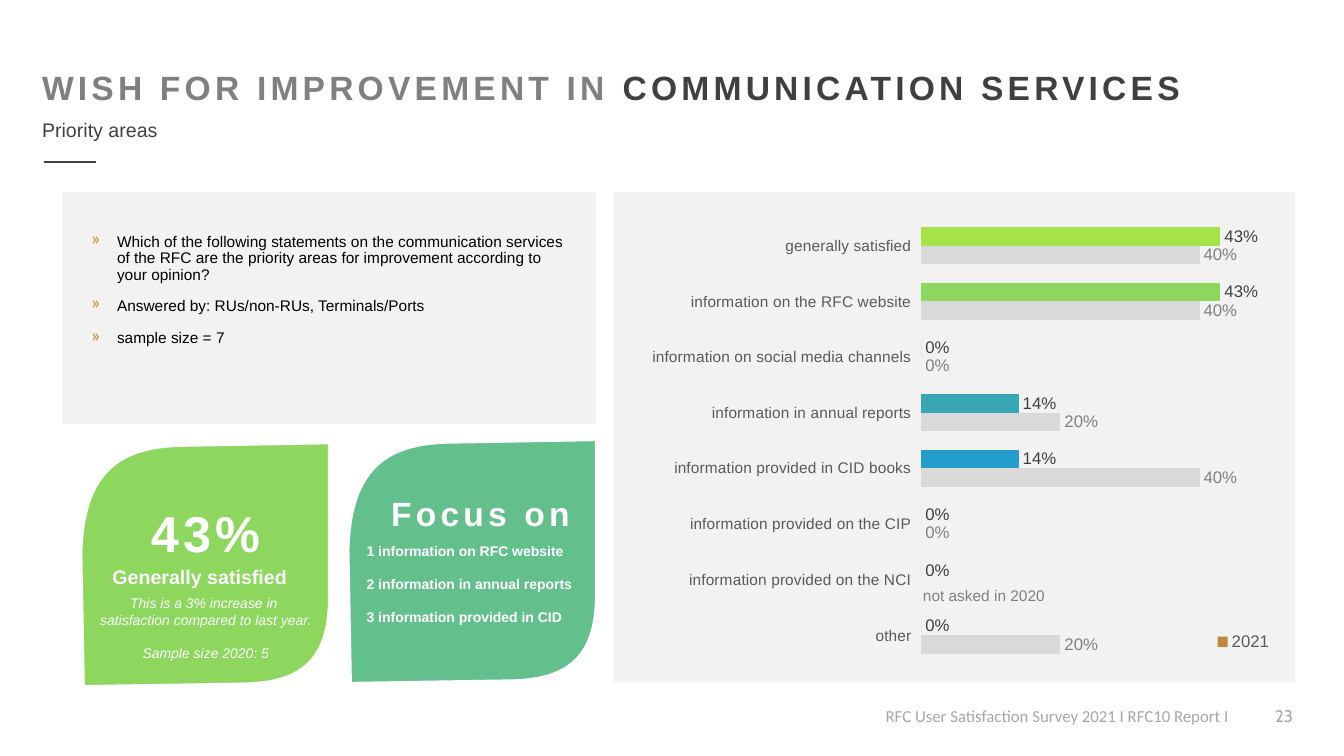
from lxml.etree import SubElement, fromstring
from pptx import Presentation
from pptx.chart.data import CategoryChartData
from pptx.dml.color import RGBColor
from pptx.enum.chart import XL_CHART_TYPE, XL_LABEL_POSITION, XL_LEGEND_POSITION, XL_TICK_MARK
from pptx.enum.shapes import MSO_CONNECTOR, MSO_SHAPE
from pptx.enum.text import MSO_ANCHOR, PP_ALIGN
from pptx.oxml.ns import qn
from pptx.util import Cm, Pt

HUES = {
    "white": "FFFFFF", "black": "000000", "panel": "F2F2F2", "dark": "404040",
    "mid": "595959", "grey": "808080", "pale": "A6A6A6", "last": "D9D9D9",
    "gold": "BF873D", "lime": "8DD75F", "green": "63C08C",
}
BARS = ["A5E348", "8DD75F", "63C08C", "37A7B5", "239DCC", "74C7E9", "9999FF", "CBCACF"]
AREAS = [
    ("generally satisfied", 0.43, 0.4),
    ("information on the RFC website", 0.43, 0.4),
    ("information on social media channels", 0, 0),
    ("information in annual reports", 0.14, 0.2),
    ("information provided in CID books", 0.14, 0.4),
    ("information provided on the CIP", 0, 0),
    ("information provided on the NCI", 0, 0),
    ("other", 0, 0.2),
]
MID, RIGHT = PP_ALIGN.CENTER, PP_ALIGN.RIGHT


def tint(name):
    return RGBColor.from_string(HUES[name])


def style(font, size, hue, face="Arial", bold=False, slant=False):
    font.size, font.name, font.bold, font.italic = Pt(size), face, bold, slant
    font.color.rgb = tint(hue)


def track(par):
    for run in par.runs:
        run._r.get_or_add_rPr().set("spc", "300")


def text(slide, box, lines, size, hue, align=None, wrap=True, gaps=(), **look):
    frame = slide.shapes.add_textbox(*map(Cm, box)).text_frame
    frame.word_wrap = wrap
    for i, line in enumerate(lines):
        par = frame.paragraphs[0] if i == 0 else frame.add_paragraph()
        par.text = line
        par.alignment = align
        style(par.font, size, hue, **look)
        if i in gaps:
            par.space_before = Pt(11.5)
    return frame


def panel(slide, box):
    rect = slide.shapes.add_shape(MSO_SHAPE.RECTANGLE, *map(Cm, box))
    rect.shadow.inherit = False
    rect.fill.solid()
    rect.fill.fore_color.rgb = tint("panel")
    rect.line.fill.background()
    return rect


def head(slide, x, y):
    frame = text(slide, (x, y, 31.45, 1.27), ["WISH FOR IMPROVEMENT IN "], 24, "grey", bold=True)
    par = frame.paragraphs[0]
    run = par.add_run()
    run.text = "COMMUNICATION SERVICES"
    run.font.color.rgb = tint("dark")
    track(par)
    text(slide, (x, y + 1.29, 3.45, 0.86), ["Priority areas"], 14, "dark", wrap=False)
    rule = slide.shapes.add_connector(
        MSO_CONNECTOR.STRAIGHT, Cm(x + 0.31), Cm(y + 2.54), Cm(x + 1.6), Cm(y + 2.54))
    rule.line.color.rgb = tint("dark")
    rule.line.width = Pt(1.5)
    SubElement(rule._element.spPr, qn("a:effectLst"))


def bullet(par):
    par.line_spacing, par.space_before = 0.9, Pt(10)
    props = par._p.get_or_add_pPr()
    props.set("marL", str(Cm(0.64)))
    props.set("indent", str(-Cm(0.64)))
    shade = SubElement(props, qn("a:buClr"))
    SubElement(shade, qn("a:srgbClr")).set("val", HUES["gold"])
    SubElement(props, qn("a:buChar")).set("char", "»")


def notes(slide, x, y):
    panel(slide, (x, y, 13.46, 5.84))
    parts = [
        (0.92, 12.57, 2.08, [
            "Which of the following statements on the communication services of the RFC "
            "are the priority areas for improvement according to your opinion?",
            "Answered by: RUs/non-RUs, Terminals/Ports"]),
        (3.35, 5.77, 0.84, ["sample size = 7"]),
    ]
    for top, wide, high, lines in parts:
        frame = text(slide, (x + 0.49, y + top, wide, high), lines, 11, "black")
        for par in frame.paragraphs:
            bullet(par)


def curve(a, b, c, d, steps=24):
    for i in range(1, steps + 1):
        t = i / steps
        s = 1 - t
        yield tuple(s**3 * p + 3 * s * s * t * q + 3 * s * t * t * r + t**3 * u
                    for p, q, r, u in zip(a, b, c, d))


def leaf(slide, x, y, hue, wide=6.22, high=6.1):
    spots = [(0.01, 1), (0, 0.45)]
    spots += curve((0, 0.45), (0.01, 0.1), (0.17, 0.01), (0.43, 0.01))
    spots += [(1, 0), (1, 0.67)]
    spots += curve((1, 0.67), (0.99, 0.9), (0.88, 0.99), (0.64, 0.99))
    pts = [(Cm(x + u * wide), Cm(y + v * high)) for u, v in spots]
    form = slide.shapes.build_freeform(*pts[0])
    form.add_line_segments(pts[1:], close=True)
    shape = form.convert_to_shape()
    shape.shadow.inherit = False
    shape.fill.solid()
    shape.fill.fore_color.rgb = tint(hue)
    shape.line.color.rgb = tint("white")
    shape.line.width = Pt(1)


def score(slide, x, y):
    leaf(slide, x, y, "lime")
    big = text(slide, (x + 1.42, y + 1.34, 3.4, 1.8), ["43%"], 36, "white", MID, False, bold=True)
    track(big.paragraphs[0])
    text(slide, (x + 0.51, y + 2.94, 4.93, 0.86), ["Generally satisfied"],
         14, "white", MID, False, bold=True)
    text(slide, (x, y + 3.68, 6.25, 1.96),
         ["This is a 3% increase in ", "satisfaction compared to last year.", "Sample size 2020: 5"],
         10, "white", MID, gaps=(2,), slant=True)


def focus(slide, x, y):
    leaf(slide, x, y, "green")
    big = text(slide, (x + 0.74, y + 1.19, 5.16, 1.27), ["Focus on"],
               24, "white", MID, False, bold=True)
    track(big.paragraphs[0])
    text(slide, (x + 0.2, y + 2.44, 5.74, 2.82),
         ["1 information on RFC website", "2 information in annual reports",
          "3 information provided in CID"],
         10, "white", wrap=False, gaps=(1, 2), bold=True)


def layout(x, y, w, h, inner=False):
    space = "http://schemas.openxmlformats.org/drawingml/2006/chart"
    aim = '<c:layoutTarget val="inner"/>' if inner else ""
    sides = "".join(f'<c:{k}Mode val="edge"/>' for k in "xy")
    sizes = "".join(f'<c:{k} val="{v}"/>' for k, v in zip("xywh", (x, y, w, h)))
    return fromstring(f'<c:layout xmlns:c="{space}"><c:manualLayout>{aim}{sides}{sizes}'
                      "</c:manualLayout></c:layout>")


def graph(slide, x, y):
    panel(slide, (x, y, 17.17, 12.34))
    names, now, past = zip(*AREAS)
    data = CategoryChartData(number_format="0%")
    data.categories = names
    data.add_series("2021", now)
    data.add_series("2020", past)
    box = map(Cm, (x + 0.61, y + 0.28, 16.23, 11.94))
    chart = slide.shapes.add_chart(XL_CHART_TYPE.BAR_CLUSTERED, *box, data).chart
    style(chart.font, 10, "black")
    chart.has_title = False

    plot = chart.plots[0]
    plot.gap_width, plot.overlap, plot.vary_by_categories = 100, 0, False
    for row, fill, ink in zip(plot.series, ("gold", "last"), ("dark", "grey")):
        row.invert_if_negative = False
        row.format.fill.solid()
        row.format.fill.fore_color.rgb = tint(fill)
        tags = row.data_labels
        tags.show_value, tags.position = True, XL_LABEL_POSITION.OUTSIDE_END
        tags.number_format, tags.number_format_is_linked = "0%", False
        style(tags.font, 12, ink)
    for i, hue in enumerate(BARS):
        fill = plot.series[0].points[i].format.fill
        fill.solid()
        fill.fore_color.rgb = RGBColor.from_string(hue)

    cats, vals = chart.category_axis, chart.value_axis
    cats.reverse_order = True
    cats.major_tick_mark = XL_TICK_MARK.OUTSIDE
    cats.format.line.fill.background()
    style(cats.tick_labels.font, 11, "mid")
    vals.minimum_scale, vals.maximum_scale = 0, 0.5
    vals.has_major_gridlines = vals.visible = False

    area = chart._chartSpace.chart.plotArea
    for old in area.findall(qn("c:layout")):
        area.remove(old)
    area.insert(0, layout(0.44, 0.03, 0.54, 0.94, True))

    chart.has_legend = True
    key = chart.legend
    key.position, key.include_in_layout = XL_LEGEND_POSITION.RIGHT, False
    style(key.font, 12, "mid")
    node = key._element
    for old in node.findall(qn("c:layout")):
        node.remove(old)
    entry = node.makeelement(qn("c:legendEntry"))
    SubElement(entry, qn("c:idx")).set("val", "0")
    SubElement(entry, qn("c:delete")).set("val", "1")
    node.insert(1, entry)
    node.insert(2, layout(0.88, 0.89, 0.12, 0.07))

    note = panel(slide, (x + 7.54, y + 9.78, 5.66, 0.74)).text_frame
    note.word_wrap, note.vertical_anchor = True, MSO_ANCHOR.MIDDLE
    par = note.paragraphs[0]
    par.text, par.alignment = "not asked in 2020", PP_ALIGN.LEFT
    style(par.font, 11, "grey")


def foot(slide, x, y):
    text(slide, (x, y, 9.65, 0.76), ["RFC User Satisfaction Survey 2021 I RFC10 Report I"],
         12, "pale", wrap=False, face="Calibri")
    text(slide, (x + 9.2, y, 1.57, 1.02), ["23"], 12, "pale", RIGHT, face="Cabin")


def main():
    deck = Presentation()
    deck.slide_width, deck.slide_height = Cm(33.87), Cm(19.05)
    slide = deck.slides.add_slide(deck.slide_layouts[6])
    head(slide, 0.81, 1.55)
    notes(slide, 1.57, 4.85)
    score(slide, 2.06, 11.18)
    focus(slide, 8.79, 11.1)
    graph(slide, 15.47, 4.85)
    foot(slide, 22.07, 17.65)
    deck.save("out.pptx")


if __name__ == "__main__":
    main()
